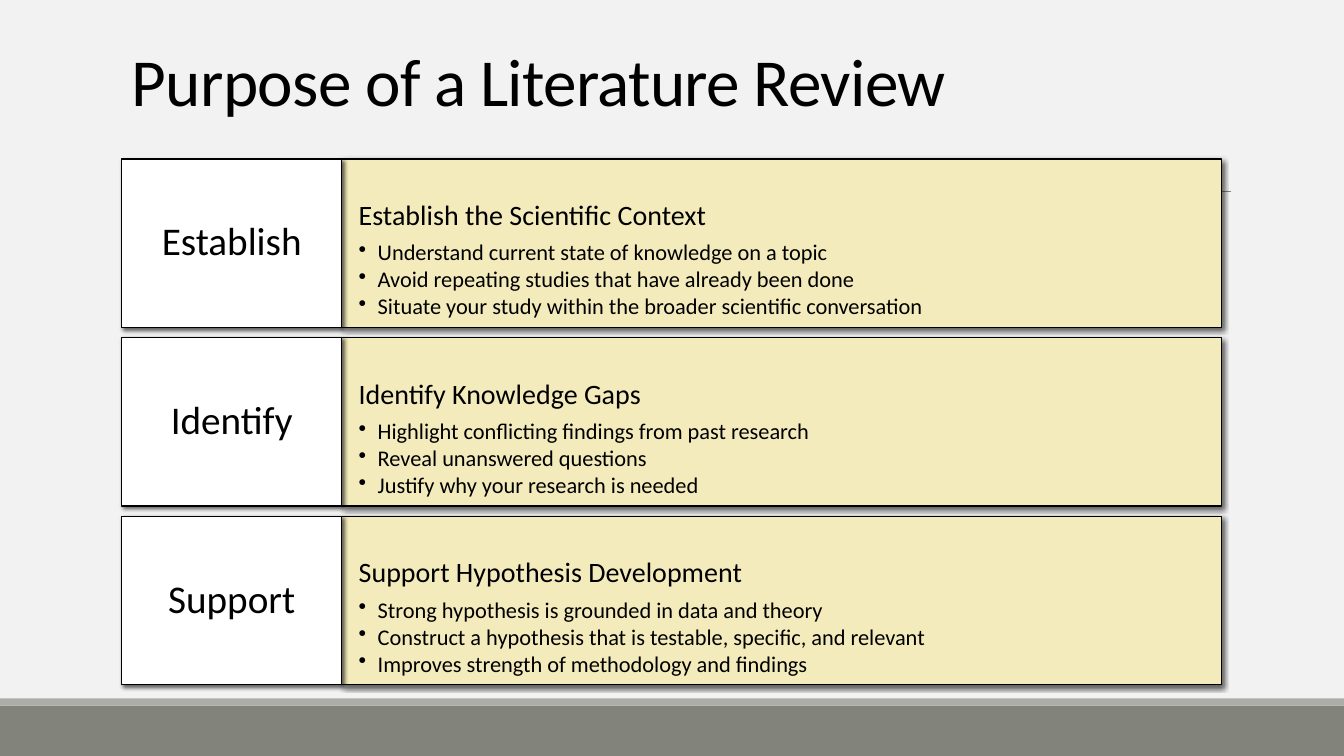
import dataclasses

import pptx
import pptx.dml.color
import pptx.enum.shapes
import pptx.enum.text
import pptx.oxml
import pptx.oxml.ns
import pptx.util

Cm = pptx.util.Cm
Pt = pptx.util.Pt
Align = pptx.enum.text.PP_ALIGN
Anchor = pptx.enum.text.MSO_ANCHOR


@dataclasses.dataclass(frozen=True)
class Theme:
    font: str = "Calibri"
    paper: str = "F2F2F2"
    ink: str = "000000"
    label: str = "FFFFFF"
    card: str = "F4EBBD"
    band: str = "82847C"
    strip: str = "ACADA8"
    rule: str = "808080"
    title_size: int = 48
    label_size: int = 28
    head_size: int = 20
    point_size: int = 16


THEME = Theme()
WIDTH, HEIGHT = 33.87, 19.05
LEFT, TOP = 3.07, 4.01
LABEL_W, CARD_W = 5.54, 22.17
ROW_H, PITCH = 4.24, 4.5

ROWS = [
    ("Establish", "Establish the Scientific Context", [
        "Understand current state of knowledge on a topic",
        "Avoid repeating studies that have already been done",
        "Situate your study within the broader scientific conversation",
    ]),
    ("Identify", "Identify Knowledge Gaps", [
        "Highlight conflicting findings from past research",
        "Reveal unanswered questions",
        "Justify why your research is needed",
    ]),
    ("Support", "Support Hypothesis Development", [
        "Strong hypothesis is grounded in data and theory",
        "Construct a hypothesis that is testable, specific, and relevant",
        "Improves strength of methodology and findings",
    ]),
]


def rgb(code):
    return pptx.dml.color.RGBColor.from_string(code)


def apply(target, values):
    for name, value in values.items():
        setattr(target, name, value)


def add_node(parent, tag, **attrs):
    node = pptx.oxml.ns.qn(tag)
    child = parent.makeelement(node, {k: str(v) for k, v in attrs.items()})
    parent.append(child)
    return child


def add_rect(slide, box, color):
    kind = pptx.enum.shapes.MSO_SHAPE.RECTANGLE
    rect = slide.shapes.add_shape(kind, *map(Cm, box))
    rect.shadow.inherit = False
    rect.fill.solid()
    rect.fill.fore_color.rgb = rgb(color)
    rect.line.fill.background()
    return rect


def add_panel(slide, box, color, blur, anchor, inset):
    """Draw an outlined rectangle with a soft shadow, ready for text."""
    panel = add_rect(slide, box, color)
    panel.line.color.rgb = rgb(THEME.ink)
    panel.line.width = Pt(1)
    effects = panel._element.spPr.find(pptx.oxml.ns.qn("a:effectLst"))
    shadow = add_node(effects, "a:outerShdw", blurRad=Pt(blur), dist=Pt(2),
                      dir=45 * 60000, algn="ctr", rotWithShape=0)
    tint = add_node(shadow, "a:srgbClr", val=THEME.ink)
    add_node(tint, "a:alpha", val=60000)
    side, edge = map(Cm, inset)
    apply(panel.text_frame, {
        "word_wrap": True, "vertical_anchor": anchor,
        "margin_left": side, "margin_right": side,
        "margin_top": edge, "margin_bottom": edge,
    })
    return panel.text_frame


def write(para, text, size, after=0, align=Align.LEFT, spacing=0.9):
    apply(para, {"alignment": align, "line_spacing": spacing,
                 "space_before": Pt(0), "space_after": Pt(after)})
    run = para.add_run()
    run.text = text
    apply(run.font, {"name": THEME.font, "size": Pt(size)})
    run.font.color.rgb = rgb(THEME.ink)
    return run


def add_bullet(para):
    props = para._p.get_or_add_pPr()
    props.set("marL", str(Cm(0.48)))
    props.set("indent", str(Cm(-0.48)))
    add_node(props, "a:buChar", char="•")


def add_row(slide, top, label, head, points):
    card = add_panel(slide, (LEFT + LABEL_W, top, CARD_W, ROW_H),
                     THEME.card, 3.5, Anchor.TOP, (0.43, 1.07))
    write(card.paragraphs[0], head, THEME.head_size, 7)
    for point in points:
        para = card.add_paragraph()
        para.level = 1
        add_bullet(para)
        write(para, point, THEME.point_size, 2)
    name = add_panel(slide, (LEFT, top, LABEL_W, ROW_H),
                     THEME.label, 3, Anchor.MIDDLE, (0.3, 0.41))
    write(name.paragraphs[0], label, THEME.label_size, align=Align.CENTER)


def add_rule(slide, start, end, y):
    kind = pptx.enum.shapes.MSO_CONNECTOR.STRAIGHT
    rule = slide.shapes.add_connector(kind, Cm(start), Cm(y), Cm(end), Cm(y))
    rule.line.color.rgb = rgb(THEME.rule)
    rule.line.width = Pt(0.5)
    add_node(rule._element.spPr, "a:effectLst")


def set_title(slide, text):
    title = slide.shapes.title
    apply(title, {"left": Cm(LEFT), "top": Cm(0.79),
                  "width": Cm(27.76), "height": Cm(2.36)})
    apply(title.text_frame, {
        "auto_size": pptx.enum.text.MSO_AUTO_SIZE.NONE,
        "word_wrap": True, "vertical_anchor": Anchor.BOTTOM,
    })
    run = write(title.text_frame.paragraphs[0], text, THEME.title_size,
                spacing=0.85)
    run._r.get_or_add_rPr().set("spc", "-50")


def main():
    deck = pptx.Presentation()
    apply(deck, {"slide_width": Cm(WIDTH), "slide_height": Cm(HEIGHT)})
    slide = deck.slides.add_slide(deck.slide_layouts.get_by_name("Title Only"))
    slide.background.fill.solid()
    slide.background.fill.fore_color.rgb = rgb(THEME.paper)
    add_rect(slide, (0, 17.78, WIDTH, 1.27), THEME.band)
    add_rect(slide, (0, 17.6, WIDTH, 0.18), THEME.strip)
    add_rule(slide, 3.33, 31.01, 4.83)
    set_title(slide, "Purpose of a Literature Review")
    for index, row in enumerate(ROWS):
        add_row(slide, TOP + index * PITCH, *row)
    deck.save("out.pptx")


if __name__ == "__main__":
    main()
